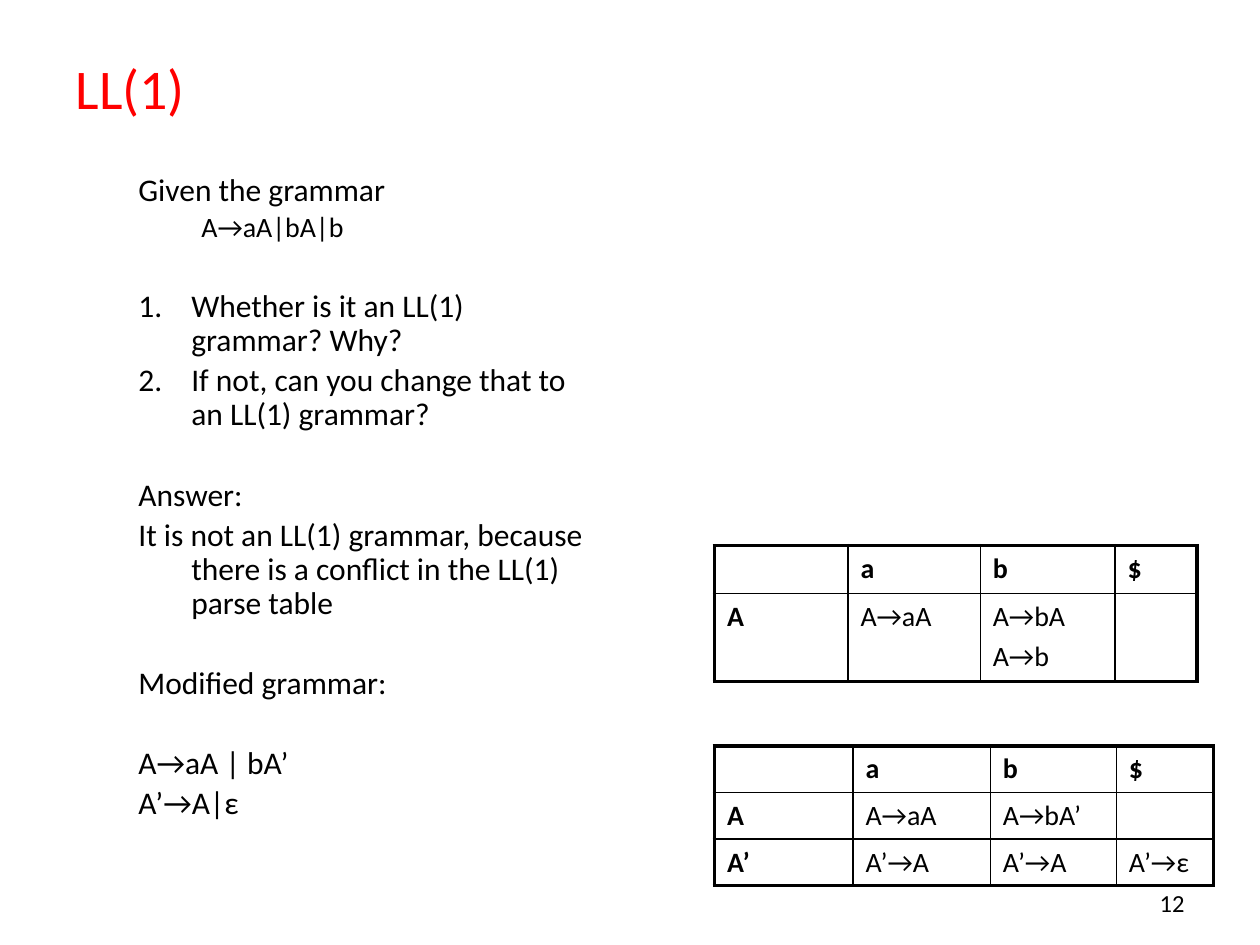
from lxml.etree import SubElement
from pptx import Presentation
from pptx.dml.color import RGBColor
from pptx.enum.text import MSO_ANCHOR, PP_ALIGN
from pptx.oxml.ns import qn
from pptx.util import Inches, Pt

FONT = "Calibri"
BLACK, RED = "000000", "FF0000"
THICK, THIN = 2.25, 1
LINE_GAP, SECTION_GAP = 3.4, 26.5

# Each block of the text column is a list of (text, style) lines.
BLOCKS = [
    [("Given the grammar", "plain"), ("A→aA|bA|b", "rule")],
    [("Whether is it an LL(1) grammar? Why?", "numbered"),
     ("If not, can you change that to an LL(1) grammar?", "numbered")],
    [("Answer:", "plain"),
     ("It is not an LL(1) grammar, because there is a conflict "
      "in the LL(1) parse table", "plain")],
    [("Modified grammar:", "plain")],
    [("A→aA | bA’", "plain"), ("A’→A|ε", "plain")],
]
STYLES = {  # size, left margin, first-line indent
    "plain": (18, 0.92, -0.42),
    "numbered": (18, 0.92, -0.42),
    "rule": (16, 1.38, -0.38),
}

PARSE_TABLES = [
    {
        "top": 4.33, "columns": [1.06, 1.05, 1.07, 0.65], "rows": [0.38, 0.7],
        "cells": [["", "a", "b", "$"],
                  ["A", "A→aA", "A→bA\nA→b", ""]],
    },
    {
        "top": 5.92, "columns": [1.1, 1.09, 1, 0.77], "rows": [0.37] * 3,
        "cells": [["", "a", "b", "$"],
                  ["A", "A→aA", "A→bA’", ""],
                  ["A’", "A’→A", "A’→A", "A’→ε"]],
    },
]
TABLE_LEFT = 5.67


def rgb(value):
    return RGBColor.from_string(value)


def write(paragraph, text, size=18, color=BLACK, bold=False, before=0,
          align=PP_ALIGN.LEFT, spacing=None):
    paragraph.alignment = align
    paragraph.space_before = Pt(before)
    if spacing:
        paragraph.line_spacing = spacing
    if not text:
        SubElement(paragraph._p, qn("a:endParaRPr"), sz=str(size * 100))
        return
    run = paragraph.add_run()
    run.text = text
    run.font.name = FONT
    run.font.size = Pt(size)
    run.font.bold = bold
    run.font.color.rgb = rgb(color)


def next_paragraph(frame, first):
    return frame.paragraphs[0] if first else frame.add_paragraph()


def add_frame(slide, left, top, width, height):
    box = slide.shapes.add_textbox(*map(Inches, (left, top, width, height)))
    box.text_frame.word_wrap = True
    return box.text_frame


def indent(paragraph, margin, first_line, numbered):
    properties = paragraph._p.get_or_add_pPr()
    properties.set("marL", str(Inches(margin)))
    properties.set("indent", str(Inches(first_line)))
    if numbered:
        SubElement(properties, qn("a:buFont"), typeface="+mj-lt")
        SubElement(properties, qn("a:buAutoNum"), type="arabicPeriod")
    else:
        SubElement(properties, qn("a:buNone"))


def add_blocks(slide):
    frame = add_frame(slide, 0.5, 1.33, 4.25, 5.75)
    for block_index, block in enumerate(BLOCKS):
        for line_index, (text, style) in enumerate(block):
            first = block_index == line_index == 0
            gap = SECTION_GAP if line_index == 0 else LINE_GAP
            size, margin, first_line = STYLES[style]
            paragraph = next_paragraph(frame, first)
            write(paragraph, text, size=size, spacing=0.9,
                  before=0 if first else gap)
            indent(paragraph, margin, first_line, style == "numbered")


def set_borders(cell, widths):
    """Draw the cell's edges; widths maps L, R, T and B to points."""
    properties = cell._tc.get_or_add_tcPr()
    for side, width in widths.items():
        line = SubElement(properties, qn(f"a:ln{side}"), w=str(Pt(width)))
        fill = SubElement(line, qn("a:solidFill"))
        SubElement(fill, qn("a:srgbClr"), val=BLACK)


def add_parse_table(slide, top, columns, rows, cells):
    table = slide.shapes.add_table(
        len(rows), len(columns), Inches(TABLE_LEFT), Inches(top),
        Inches(sum(columns)), Inches(sum(rows))).table
    table.first_row = table.horz_banding = False
    for column, width in zip(table.columns, columns):
        column.width = Inches(width)
    for row, height in zip(table.rows, rows):
        row.height = Inches(height)

    last_row, last_column = len(rows) - 1, len(columns) - 1
    for r, texts in enumerate(cells):
        for c, text in enumerate(texts):
            cell = table.cell(r, c)
            outer = {"L": c == 0, "R": c == last_column,
                     "T": r == 0, "B": r == last_row}
            set_borders(cell, {side: THICK if edge else THIN
                               for side, edge in outer.items()})
            cell.fill.background()
            for i, line in enumerate(text.split("\n")):
                write(next_paragraph(cell.text_frame, i == 0), line, size=16,
                      bold=r == 0 or c == 0, before=LINE_GAP if i else 0)


def main():
    deck = Presentation()
    deck.slide_width, deck.slide_height = Inches(10), Inches(7.5)
    slide = deck.slides.add_slide(deck.slide_layouts[5])

    title = slide.shapes.title
    title.left, title.top = Inches(0.5), Inches(0.3)
    title.width, title.height = Inches(9), Inches(0.78)
    title.text_frame.vertical_anchor = MSO_ANCHOR.MIDDLE
    write(title.text_frame.paragraphs[0], "LL(1)", size=32, color=RED)

    add_blocks(slide)
    for parse_table in PARSE_TABLES:
        add_parse_table(slide, **parse_table)

    page_number = add_frame(slide, 7.17, 7, 2.33, 0.35)
    write(page_number.paragraphs[0], "12", size=14, align=PP_ALIGN.RIGHT)

    deck.save("out.pptx")


if __name__ == "__main__":
    main()
